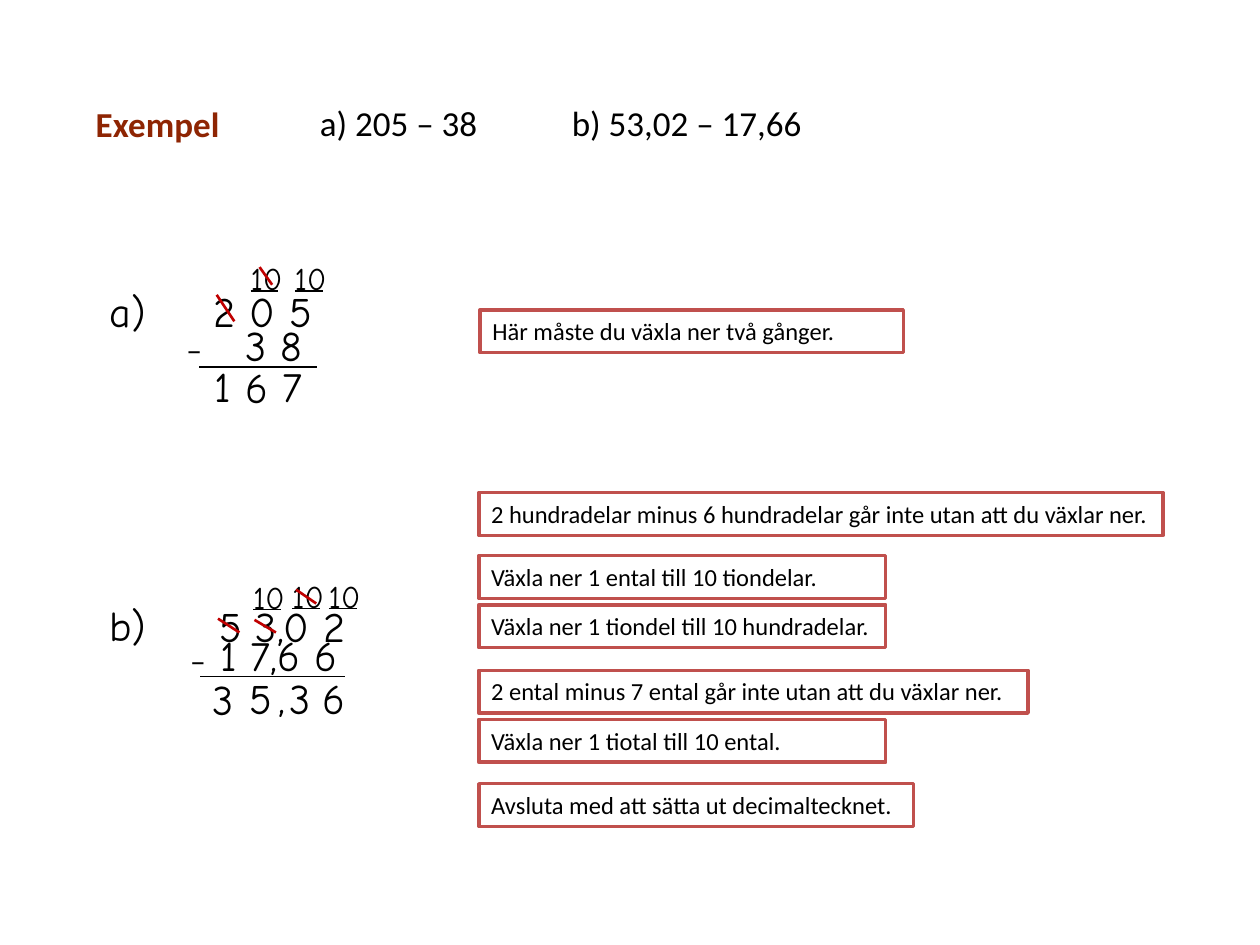
from lxml.etree import SubElement
from pptx import Presentation
from pptx.dml.color import RGBColor
from pptx.enum.shapes import MSO_CONNECTOR, MSO_SHAPE
from pptx.enum.text import MSO_ANCHOR, MSO_AUTO_SIZE, PP_ALIGN
from pptx.oxml.ns import qn
from pptx.util import Inches, Pt

COLORS = {"title": "8E2503", "ink": "000000", "frame": "C0504D",
          "strike": "C00000", "paper": "FFFFFF"}
BODY, HAND = "Calibri", "Comic Neue"

TITLE = "Exempel"
TASKS = [("a) 205 – 38", 2.44, 2.0), ("b) 53,02 – 17,66", 4.44, 2.6)]

DIGITS = [
    ("a)", 0.77, 2.22, 0.54), ("2 0 5", 1.6, 2.22, 1.14),
    ("3 8", 1.85, 2.49, 1.15),
    ("1", 1.6, 2.81, 0.29), ("6", 1.85, 2.82, 0.29), ("7", 2.14, 2.81, 0.29),
    ("b)", 0.77, 4.71, 0.54), ("5 3,0 2", 1.64, 4.72, 1.59),
    ("1 7,6 6", 1.65, 4.95, 1.57),
    ("3", 1.59, 5.3, 0.29), ("5", 1.88, 5.29, 0.29), (",", 2.11, 5.28, 0.29),
    ("3", 2.2, 5.29, 0.29), ("6", 2.46, 5.29, 0.29),
]
MINUS = [(1.38, 2.57), (1.41, 5.04)]
TENS = [(1.89, 2.01), (2.24, 2.01), (1.91, 4.54), (2.22, 4.53), (2.51, 4.53)]
SUMS = [(1.58, 2.91, 2.52, 2.91), (1.59, 5.37, 2.74, 5.37)]
STRIKES = [
    (1.86, 2.55, 1.72, 2.34), (2.16, 2.26, 2.06, 2.12),
    (1.73, 4.91, 1.9, 5.02), (2.02, 4.92, 2.19, 5.02),
    (2.35, 4.68, 2.51, 4.79),
]
NOTES = [
    ("Här måste du växla ner två gånger.", 3.81, 2.46, 3.36),
    ("2 hundradelar minus 6 hundradelar går inte utan att du växlar ner.",
     3.8, 3.91, 5.43),
    ("Växla ner 1 ental till 10 tiondelar.", 3.8, 4.41, 3.23),
    ("Växla ner 1 tiondel till 10 hundradelar.", 3.8, 4.8, 3.23),
    ("2 ental minus 7 ental går inte utan att du växlar ner.",
     3.8, 5.32, 4.36),
    ("Växla ner 1 tiotal till 10 ental.", 3.8, 5.71, 3.23),
    ("Avsluta med att sätta ut decimaltecknet.", 3.8, 6.22, 3.45),
]


def paint(name):
    return RGBColor.from_string(COLORS[name])


def write(shape, text, size, face, color="ink", bold=False):
    frame = shape.text_frame
    frame.text = text
    frame.word_wrap = True
    frame.auto_size = MSO_AUTO_SIZE.SHAPE_TO_FIT_TEXT
    frame.vertical_anchor = MSO_ANCHOR.TOP
    para = frame.paragraphs[0]
    para.alignment = PP_ALIGN.LEFT
    para.font.size = Pt(size)
    para.font.name = face
    para.font.bold = bold
    para.font.color.rgb = paint(color)


def label(shapes, text, x, y, w, h, size, face):
    box = shapes.add_textbox(Inches(x), Inches(y), Inches(w), Inches(h))
    write(box, text, size, face)


def rule(shapes, ends, width, color="ink"):
    line = shapes.add_connector(MSO_CONNECTOR.STRAIGHT, *map(Inches, ends))
    line.line.width = Pt(width)
    line.line.color.rgb = paint(color)
    SubElement(line._element.spPr, qn("a:effectLst"))


def note(shapes, text, x, y, w):
    box = shapes.add_shape(MSO_SHAPE.RECTANGLE, Inches(x), Inches(y),
                           Inches(w), Inches(0.34))
    box.shadow.inherit = False
    box.fill.solid()
    box.fill.fore_color.rgb = paint("paper")
    box.line.color.rgb = paint("frame")
    box.line.width = Pt(2)
    write(box, text, 14, BODY)


def main():
    deck = Presentation()
    deck.slide_width, deck.slide_height = Inches(10), Inches(7.5)
    slide = deck.slides.add_slide(deck.slide_layouts[5])
    shapes = slide.shapes

    title = shapes.title
    title.left, title.top = Inches(0.66), Inches(0.76)
    title.width, title.height = Inches(1.19), Inches(0.44)
    write(title, TITLE, 20, BODY, "title", True)
    title.text_frame.word_wrap = False

    for text, x, w in TASKS:
        label(shapes, text, x, 0.76, w, 0.44, 20, BODY)
    for text, x, y, w in DIGITS:
        label(shapes, text, x, y, w, 0.5, 24, HAND)
    for x, y in MINUS:
        label(shapes, "–", x, y, 0.35, 0.4, 18, BODY)
    for x, y in TENS:
        group = shapes.add_group_shape().shapes
        rule(group, (x + 0.1, y + 0.3, x + 0.32, y + 0.3), 0.75)
        label(group, "10", x, y, 0.59, 0.4, 18, HAND)
    for ends in SUMS:
        rule(shapes, ends, 1)
    for ends in STRIKES:
        rule(shapes, ends, 1.5, "strike")
    for item in NOTES:
        note(shapes, *item)

    deck.save("out.pptx")


if __name__ == "__main__":
    main()
